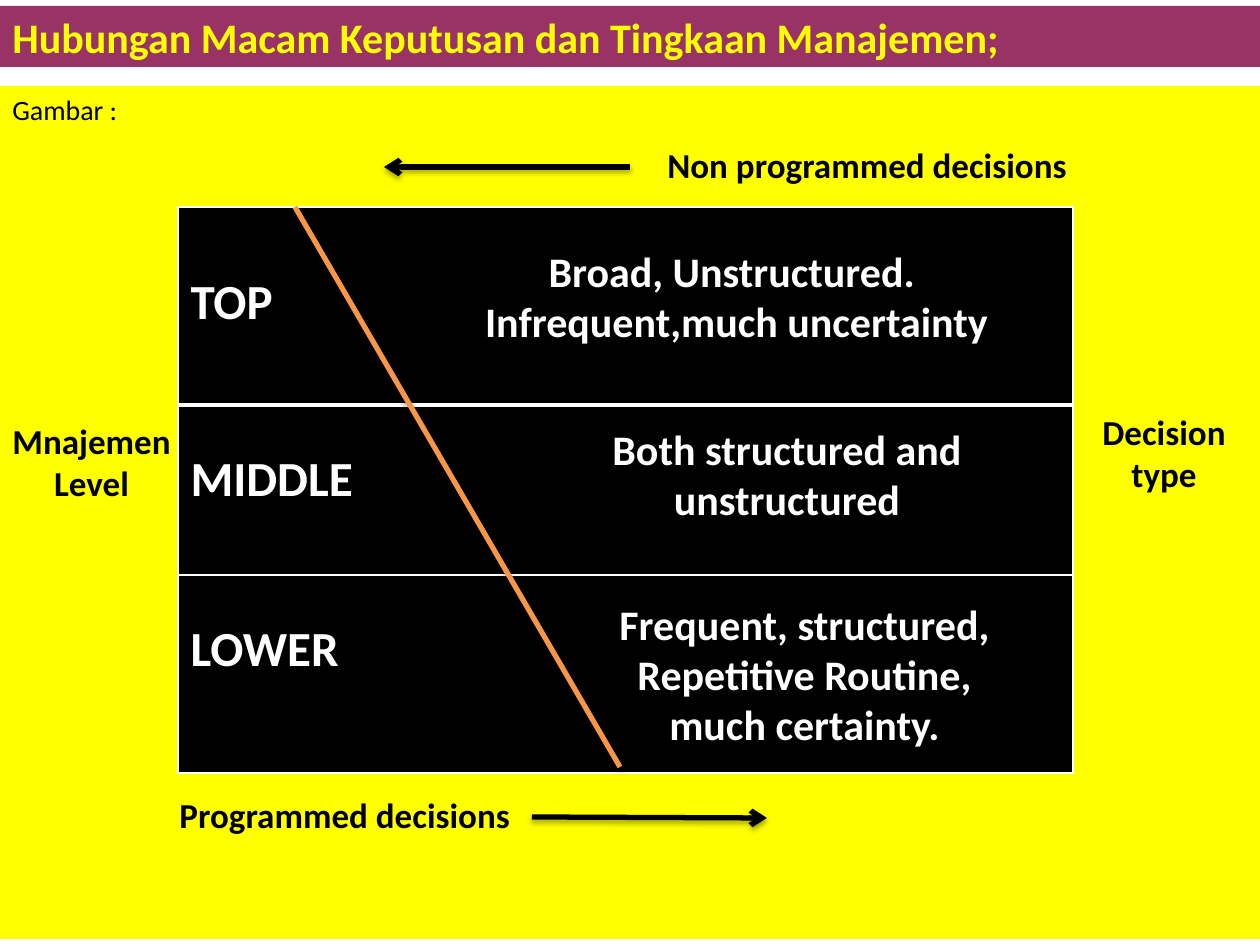
from dataclasses import dataclass

from lxml import etree
from pptx import Presentation
from pptx.dml.color import RGBColor
from pptx.enum.shapes import MSO_CONNECTOR as Connector, MSO_SHAPE as Shape
from pptx.enum.text import MSO_ANCHOR as Anchor, PP_ALIGN as Align
from pptx.oxml import parse_xml
from pptx.oxml.ns import nsdecls, qn
from pptx.util import Emu, Pt

EMU_PER_PX = 914400 / 126


@dataclass(frozen=True)
class Theme:
    font: str = "Calibri"
    black: str = "000000"
    white: str = "FFFFFF"
    yellow: str = "FFFF00"
    plum: str = "993366"
    orange: str = "F79646"
    level_size: int = 28
    heading_size: int = 24
    label_size: int = 20
    note_size: int = 16
    line_width: int = 3
    border_width: int = 1


THEME = Theme()
HEADING = {"size": Pt(THEME.heading_size), "bold": True}
LEVEL = {"size": Pt(THEME.level_size), "bold": True}
LABEL = {"size": Pt(THEME.label_size), "bold": True}
NOTE = {"size": Pt(THEME.note_size), "bold": False}


def px(value):
    return Emu(round(value * EMU_PER_PX))


def write_lines(frame, lines, style, color, alignments):
    """Write one paragraph for each line, with its own alignment."""
    for index, (line, alignment) in enumerate(zip(lines, alignments)):
        paragraph = frame.paragraphs[0] if index == 0 else frame.add_paragraph()
        paragraph.alignment = alignment
        run = paragraph.add_run()
        run.text = line
        for name, value in {"name": THEME.font, **style}.items():
            setattr(run.font, name, value)
        run.font.color.rgb = RGBColor.from_string(color)


def add_band(slide, box, fill, text, style, color, anchor):
    shape = slide.shapes.add_shape(Shape.RECTANGLE, *map(px, box))
    shape.shadow.inherit = False
    shape.fill.solid()
    shape.fill.fore_color.rgb = RGBColor.from_string(fill)
    shape.line.fill.background()
    shape.text_frame.vertical_anchor = anchor
    write_lines(shape.text_frame, [text], style, color, [Align.LEFT])


def add_text(slide, box, lines, style, color, alignments, wrap=False):
    frame = slide.shapes.add_textbox(*map(px, box)).text_frame
    frame.word_wrap = wrap
    write_lines(frame, lines, style, color, alignments)


def add_line(slide, start, end, color, arrow=False):
    line = slide.shapes.add_connector(Connector.STRAIGHT, *map(px, start + end))
    line.line.width = Pt(THEME.line_width)
    line.line.color.rgb = RGBColor.from_string(color)
    if arrow:
        etree.SubElement(line.line._get_or_add_ln(), qn("a:tailEnd"), type="arrow")
    # Soft shadow straight below the line
    line._element.spPr.append(parse_xml(
        f'<a:effectLst {nsdecls("a")}>'
        f'<a:outerShdw blurRad="{Pt(3.1)}" dist="{Pt(1.8)}" dir="5400000" rotWithShape="0">'
        f'<a:srgbClr val="{THEME.black}"><a:alpha val="35000"/></a:srgbClr>'
        '</a:outerShdw></a:effectLst>'))


def set_borders(cell, widths):
    properties = cell._tc.get_or_add_tcPr()
    for index, (side, width) in enumerate(widths.items()):
        properties.insert(index, parse_xml(
            f'<a:ln{side} {nsdecls("a")} w="{Pt(width)}"><a:solidFill>'
            f'<a:srgbClr val="{THEME.white}"/></a:solidFill></a:ln{side}>'))


def add_level_table(slide, left, top, width, levels):
    """Add a row for each (name, height, top margin, top and bottom border)."""
    height = sum(level[1] for level in levels)
    table = slide.shapes.add_table(
        len(levels), 1, *map(px, (left, top, width, height))).table
    table.first_row = table.horz_banding = False
    for row, (name, row_height, margin, upper, lower) in zip(table.rows, levels):
        row.height = px(row_height)
        cell = row.cells[0]
        cell.margin_top = px(margin)
        cell.fill.solid()
        cell.fill.fore_color.rgb = RGBColor.from_string(THEME.black)
        side = THEME.border_width
        set_borders(cell, {"L": side, "R": side, "T": upper, "B": lower})
        write_lines(cell.text_frame, [name], LEVEL, THEME.white, [Align.LEFT])


def main():
    presentation = Presentation()
    presentation.slide_width, presentation.slide_height = px(1260), px(945)
    slide = presentation.slides.add_slide(presentation.slide_layouts[6])

    # Title band and yellow panel
    add_band(slide, (0, 6, 1260, 61), THEME.plum,
             "Hubungan Macam Keputusan dan Tingkaan Manajemen;",
             HEADING, THEME.yellow, Anchor.MIDDLE)
    add_band(slide, (0, 86, 1260, 853), THEME.yellow, "Gambar :",
             NOTE, THEME.black, Anchor.TOP)

    # Management levels, split by the diagonal
    thin, thick = THEME.border_width, THEME.line_width
    add_level_table(slide, 178, 207, 895, [
        ("TOP", 198, 66, thin, thick),
        ("MIDDLE", 170, 45, thick, thin),
        ("LOWER", 198, 45, thin, thin),
    ])
    add_line(slide, (295, 207), (620, 767), THEME.orange)

    # Nature of the decisions at each level
    for box, lines, wrap in [
        ((470, 239, 533, 115),
         ["Broad, Unstructured. ", "Infrequent,much uncertainty"], False),
        ((551, 417, 472, 115), ["Both structured and unstructured"], True),
        ((605, 592, 399, 165),
         ["Frequent, structured,", "Repetitive Routine,", "much certainty."], False),
    ]:
        add_text(slide, box, lines, HEADING, THEME.white,
                 [Align.CENTER] * len(lines), wrap)

    # Labels around the table
    for box, lines in [
        ((655, 137, 428, 55), ["Non programmed decisions"]),
        ((1090, 404, 150, 97), ["Decision", "type"]),
        ((167, 787, 359, 55), ["Programmed decisions"]),
        ((0, 413, 185, 97), ["Mnajemen", "Level"]),
    ]:
        add_text(slide, box, lines, LABEL, THEME.black, [Align.LEFT, Align.CENTER])

    # Direction arrows
    add_line(slide, (532, 817), (767, 818), THEME.black, arrow=True)
    add_line(slide, (630, 167), (384, 167), THEME.black, arrow=True)

    presentation.save("out.pptx")


if __name__ == "__main__":
    main()
